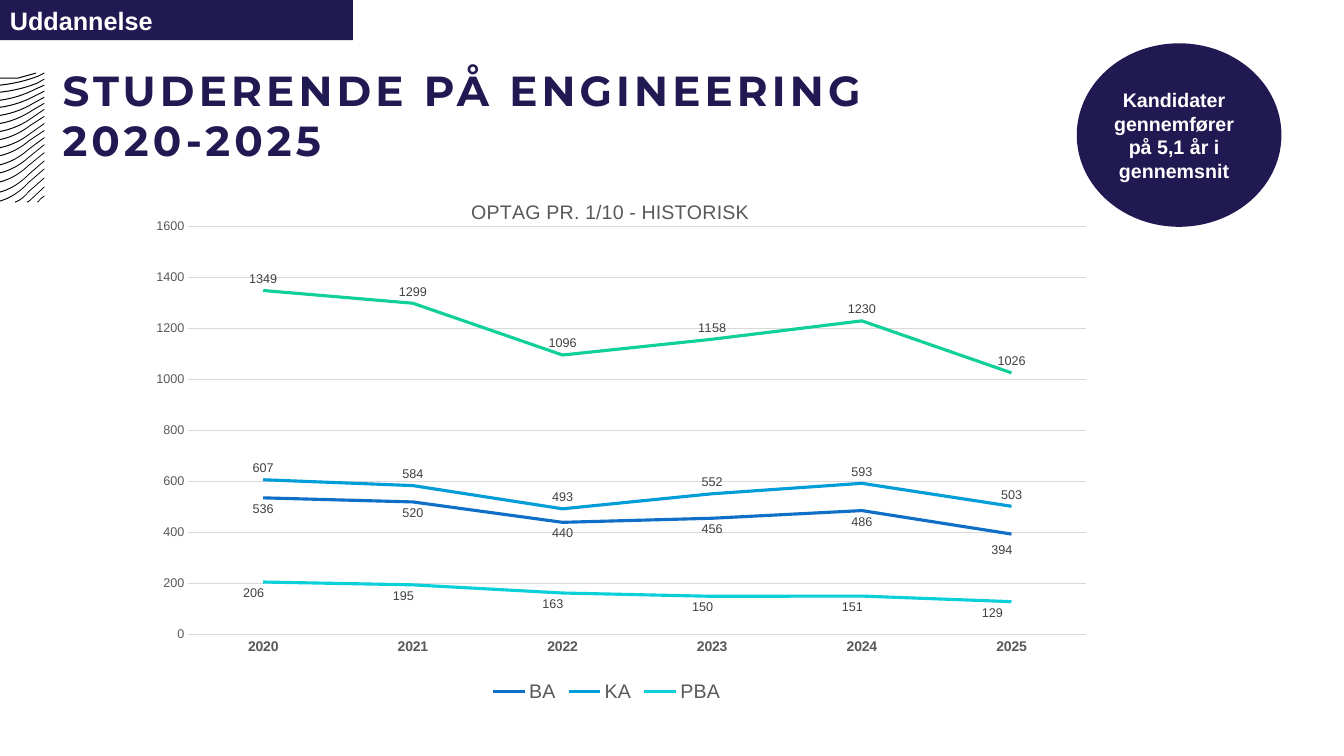
from lxml import etree
from pptx import Presentation
from pptx.chart.data import CategoryChartData
from pptx.dml.color import RGBColor
from pptx.enum.chart import XL_CHART_TYPE, XL_LABEL_POSITION, XL_LEGEND_POSITION, XL_MARKER_STYLE, XL_TICK_MARK
from pptx.enum.shapes import MSO_SHAPE
from pptx.enum.text import MSO_ANCHOR, PP_ALIGN
from pptx.oxml import parse_xml
from pptx.oxml.ns import nsdecls, qn
from pptx.util import Inches, Pt

LINE = XL_CHART_TYPE.LINE
ABOVE, BELOW = XL_LABEL_POSITION.ABOVE, XL_LABEL_POSITION.BELOW
BOTTOM = XL_LEGEND_POSITION.BOTTOM
NO_MARKER, NO_TICK = XL_MARKER_STYLE.NONE, XL_TICK_MARK.NONE
RECT, OVAL = MSO_SHAPE.RECTANGLE, MSO_SHAPE.OVAL
MIDDLE, LEFT, CENTER = MSO_ANCHOR.MIDDLE, PP_ALIGN.LEFT, PP_ALIGN.CENTER

NAVY, WHITE, GREY, GRID, DARK = "211A52", "FFFFFF", "595959", "D9D9D9", "404040"
TAG = ["Uddannelse"]
TITLE = "STUDERENDE PÅ ENGINEERING\v2020-2025"
FACT = ["Kandidater gennemfører", "på 5,1 år i gennemsnit"]
CHART_TITLE = "OPTAG PR. 1/10 - HISTORISK"
YEARS = ["2020", "2021", "2022", "2023", "2024", "2025"]
SERIES = [
    ("BA", [536, 520, 440, 456, 486, 394], "0F6FC6", BELOW),
    ("KA", [607, 584, 493, 552, 593, 503], "009DD9", ABOVE),
    ("PBA", [206, 195, 163, 150, 151, 129], "0BD0D9", BELOW),
    ("total", [1349, 1299, 1096, 1158, 1230, 1026], "10CF9B", ABOVE),
]
LABEL_SHIFTS = {
    "BA": {5: (-0.01, 0.01)},
    "PBA": {0: (-0.01, 0), 1: (-0.01, 0), 2: (-0.01, 0),
            3: (-0.01, 0), 4: (-0.01, 0), 5: (-0.02, 0)},
}
EDGE, STRIPE_WIDTH, STEPS = 0.44, 0.01, 10
FULL_WAVES = [
    (1.68, 0.28, 1.82, 2.0), (1.6, 0.28, 1.74, 1.91), (1.52, 0.28, 1.65, 1.81),
    (1.44, 0.28, 1.57, 1.72), (1.37, 0.28, 1.49, 1.64), (1.3, 0.29, 1.4, 1.55),
    (1.23, 0.3, 1.33, 1.47), (1.16, 0.3, 1.25, 1.39), (1.09, 0.31, 1.18, 1.31),
    (1.03, 0.32, 1.1, 1.23), (0.97, 0.33, 1.03, 1.15), (0.91, 0.34, 0.96, 1.07),
    (0.85, 0.35, 0.89, 1.0), (0.79, 0.37, 0.83, 0.92), (0.73, 0.38, 0.76, 0.85),
]
CUT_WAVES = [
    ((EDGE, 1.95), (0.4, 1.98), (0.37, 2.01)),
    ((EDGE, 1.86), (0.29, 2.0), (0.27, 2.01)),
    ((EDGE, 1.77), (0.28, 1.91), (0.15, 2.01)),
    ((0.36, 0.73), (0.18, 0.78), (0, 0.78)),
]


def rgb(value):
    return RGBColor.from_string(value)


def set_font(font, size, color, bold=False, name="Arial"):
    font.size, font.bold, font.name = Pt(size), bold, name
    font.color.rgb = rgb(color)


def set_fill(sp, color):
    sp.shadow.inherit = False
    sp.fill.solid()
    sp.fill.fore_color.rgb = rgb(color)
    sp.line.fill.background()


def wave_points(start, mid, end):
    (mx, my), (ex, ey) = mid, end
    dx, dy = ex - mx, ey - my
    xs = (mx, mx + 0.3 * dx, mx + 0.65 * dx, ex)
    ys = (my, my + 0.5 * dy, my + 0.85 * dy, ey)
    points = [start]
    for i in range(STEPS + 1):
        t = i / STEPS
        weights = ((1 - t) ** 3, 3 * t * (1 - t) ** 2, 3 * t * t * (1 - t), t ** 3)
        points.append(tuple(sum(w * v for w, v in zip(weights, vs)) for vs in (xs, ys)))
    return points


def add_wave(s, wave):
    lower = wave_points(*wave)
    upper = [(x, y - STRIPE_WIDTH) for x, y in reversed(lower)]
    outline = [(Inches(x), Inches(y)) for x, y in lower + upper]
    builder = s.shapes.build_freeform(*outline[0])
    builder.add_line_segments(outline[1:])
    set_fill(builder.convert_to_shape(), "000000")


def add_panel(s, kind, box, lines, size, align):
    sp = s.shapes.add_shape(kind, *map(Inches, box))
    set_fill(sp, NAVY)
    tf = sp.text_frame
    tf.word_wrap, tf.vertical_anchor = True, MIDDLE
    tf.text = "\n".join(lines)
    for p in tf.paragraphs:
        p.alignment = align
        set_font(p.font, size, WHITE, True)
    return tf


def layout(x, y, w=None, h=None):
    parts = [("layoutTarget", "inner"), ("xMode", "edge"), ("yMode", "edge")] if w else []
    parts += [(k, v) for k, v in zip("xywh", (x, y, w, h)) if v is not None]
    root = parse_xml(f"<c:layout {nsdecls('c')}><c:manualLayout/></c:layout>")
    for key, value in parts:
        etree.SubElement(root[0], qn(f"c:{key}")).set("val", str(value))
    return root


def place_title(title):
    position = layout(0.355, 0.04)
    for i, mode in enumerate(("xMode", "yMode")):
        element = etree.Element(qn(f"c:{mode}"))
        element.set("val", "edge")
        position[0].insert(i, element)
    for old in title.findall(qn("c:layout")):
        title.remove(old)
    title.find(qn("c:tx")).addnext(position)


def style_series(series, color, position):
    series.smooth = False
    series.marker.style = NO_MARKER
    series.format.line.color.rgb = rgb(color)
    series.format.line.width = Pt(2.25)
    labels = series.data_labels
    labels.show_value, labels.position = True, position
    set_font(labels.font, 9, DARK)
    for i, shift in LABEL_SHIFTS.get(series.name, {}).items():
        label = series.points[i].data_label
        label.position = position
        set_font(label.font, 9, DARK)
        element = labels._element.findall(qn("c:dLbl"))[-1]
        element.insert(1, layout(*shift))


def add_intake_chart(s):
    data = CategoryChartData()
    data.categories = YEARS
    for name, values, _, _ in SERIES:
        data.add_series(name, values)
    box = map(Inches, (1.26, 1.73, 9.52, 5.28))
    chart = s.shapes.add_chart(LINE, *box, data).chart
    set_font(chart.font, 10, "000000")
    chart.has_title = True
    p = chart.chart_title.text_frame.paragraphs[0]
    p.text = CHART_TITLE
    set_font(p.font, 14, GREY)
    place_title(chart.chart_title._element)
    plot_area = chart._chartSpace.chart.plotArea
    for old in plot_area.findall(qn("c:layout")):
        plot_area.remove(old)
    plot_area.insert(0, layout(0.064, 0.098, 0.936, 0.767))

    years, counts = chart.category_axis, chart.value_axis
    for axis in (years, counts):
        axis.major_tick_mark = axis.minor_tick_mark = NO_TICK
    set_font(years.tick_labels.font, 10, GREY, True)
    set_font(counts.tick_labels.font, 9, GREY)
    counts.minimum_scale, counts.maximum_scale, counts.major_unit = 0, 1600, 200
    counts.format.line.fill.background()
    for line in (years.format.line, counts.major_gridlines.format.line):
        line.color.rgb, line.width = rgb(GRID), Pt(0.75)

    chart.plots[0].vary_by_categories = False
    for series, (_, _, color, position) in zip(chart.plots[0].series, SERIES):
        style_series(series, color, position)
    chart.has_legend = True
    legend = chart.legend
    legend.position, legend.include_in_layout = BOTTOM, False
    set_font(legend.font, 14, GREY)
    legend._element.find(qn("c:legendPos")).addnext(parse_xml(
        f"<c:legendEntry {nsdecls('c')}><c:idx val='3'/><c:delete val='1'/></c:legendEntry>"))


def main():
    """Build the slide on student intake in engineering."""
    prs = Presentation()
    prs.slide_width, prs.slide_height = Inches(13.33), Inches(7.5)
    s = prs.slides.add_slide(prs.slide_layouts[6])
    full = [((EDGE, r), (mx, my), (0, end)) for r, mx, my, end in FULL_WAVES]
    for wave in full + CUT_WAVES:
        add_wave(s, wave)
    add_panel(s, RECT, (0, 0, 3.5, 0.4), TAG, 18, LEFT)

    tf = s.shapes.add_textbox(*map(Inches, (0.62, 0.43, 10.05, 1.63))).text_frame
    tf.word_wrap = True
    tf.margin_left = tf.margin_right = tf.margin_bottom = 0
    tf.margin_top = Inches(0.21)
    p = tf.paragraphs[0]
    p.text = TITLE
    set_font(p.font, 30, NAVY, True, "Montserrat")
    for r in p.runs:
        r.font._element.set("spc", "300")

    tf = add_panel(s, OVAL, (10.68, 0.43, 2.03, 1.82), FACT, 14, CENTER)
    tf.margin_left, tf.margin_right = 0, Inches(0.1)
    tf.margin_top = tf.margin_bottom = Inches(0.06)
    add_intake_chart(s)
    prs.save("out.pptx")


if __name__ == "__main__":
    main()
